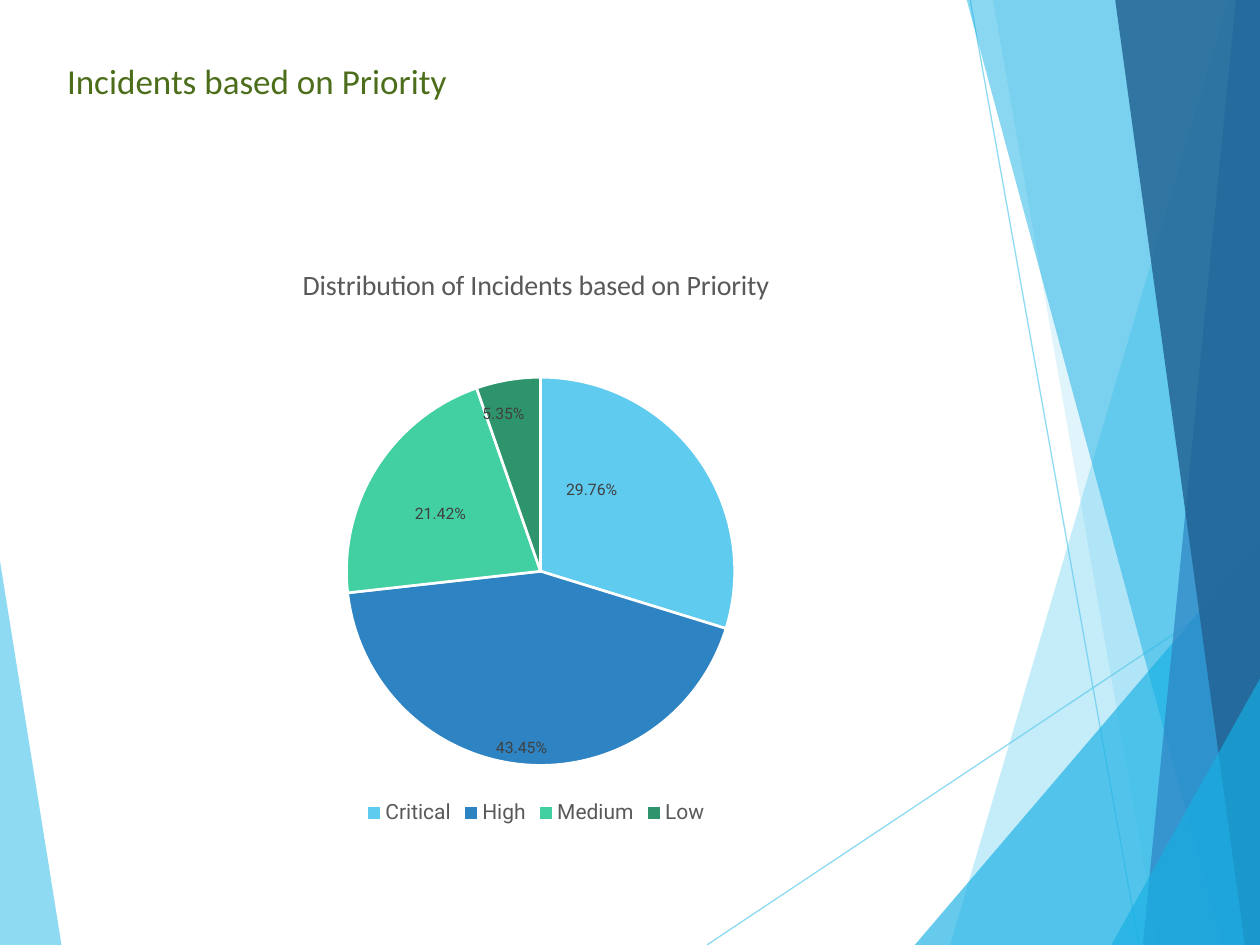
from lxml import etree
from pptx import Presentation
from pptx.chart.data import CategoryChartData
from pptx.dml.color import RGBColor
from pptx.enum import chart as c, text
from pptx.oxml.ns import qn
from pptx.util import Inches, Pt

SKY, CYAN, BLUE, NAVY = "5FCBEF", "17B0E4", "2E83C3", "226292"
GREY, CHARCOAL = "595959", "404040"
LEFT_FACET = (SKY, 70, [(-0.01, 4.39), (0.49, 7.51), (-0.01, 7.5)])
RIGHT_FACETS = [
    (SKY, 36, [(9.75, 0), (7.54, 7.5), (10.02, 7.51), (10.01, 0)]),
    (SKY, 20, [(7.88, -0.01), (9.19, 7.5), (10.01, 7.5), (10.01, -0.01)]),
    (CYAN, 66, [(7.26, 7.5), (10, 4.29), (10.01, 7.5)]),
    (CYAN, 50, [(7.67, -0.01), (9.7, 7.5), (10.01, 7.5), (10.01, -0.01)]),
    (BLUE, 70, [(9.81, -0.01), (9.07, 7.5), (10.01, 7.5), (10, -0.01)]),
    (NAVY, 82, [(8.85, -0.01), (9.88, 7.5), (10.02, 7.5), (10, -0.01)]),
    (CYAN, 66, [(8.82, 7.5), (10.02, 5.35), (10.02, 7.5)]),
]
RAYS = [((5.61, 7.5), (10.01, 4.57)), ((7.7, 0), (9.04, 7.5))]
CENTER, EDGE = c.XL_LABEL_POSITION.CENTER, c.XL_LABEL_POSITION.INSIDE_END
PRIORITIES = [
    ("Critical", 29.76, SKY, CENTER, {"x": -0.03, "y": -0.04}),
    ("High", 43.45, BLUE, EDGE, {"x": -0.03, "y": 0}),
    ("Medium", 21.42, "42D0A2", CENTER, {"x": -0.02, "y": -0.01}),
    ("Low", 5.35, "2E946B", EDGE, {"x": -0.03, "y": 0.03}),
]
PLOT_LAYOUT = {"layoutTarget": "inner", "xMode": "edge", "yMode": "edge",
               "x": 0.29, "y": 0.23, "w": 0.43, "h": 0.66}


def color(hex_value):
    return RGBColor.from_string(hex_value)


def set_values(target, values):
    for name, value in values.items():
        setattr(target, name, value)


def set_font(font, name, size, hex_value):
    set_values(font, {"name": name, "size": Pt(size), "bold": False})
    font.color.rgb = color(hex_value)


def set_alpha(element, percent):
    fill_color = next(element.iter(qn("a:srgbClr")))
    etree.SubElement(fill_color, qn("a:alpha"), val=str(percent * 1000))


def add_facet(slide, fill, alpha, points):
    corners = [(Inches(x), Inches(y)) for x, y in points]
    builder = slide.shapes.build_freeform(*corners[0])
    builder.add_line_segments(corners[1:], close=True)
    shape = builder.convert_to_shape()
    shape.shadow.inherit = False
    shape.fill.solid()
    shape.fill.fore_color.rgb = color(fill)
    shape.line.fill.background()
    set_alpha(shape.element.spPr, alpha)


def add_ray(slide, start, end):
    ray = slide.shapes.add_connector(1, *map(Inches, start + end))
    ray.line.color.rgb = color(SKY)
    ray.line.width = Pt(0.75)
    properties = ray.element.spPr
    set_alpha(properties, 70)
    etree.SubElement(properties, qn("a:effectLst"))


def add_heading(slide, wording):
    box = slide.shapes.add_textbox(*map(Inches, (0.42, 0.42, 3.24, 0.44)))
    frame = box.text_frame
    set_values(frame, {"word_wrap": False,
                       "auto_size": text.MSO_AUTO_SIZE.SHAPE_TO_FIT_TEXT})
    paragraph = frame.paragraphs[0]
    paragraph.alignment = text.PP_ALIGN.CENTER
    run = paragraph.add_run()
    run.text = wording
    set_font(run.font, "Calibri", 20, "4C6E1B")


def set_layout(parent, index, values):
    for old_layout in parent.findall(qn("c:layout")):
        parent.remove(old_layout)
    layout = etree.Element(qn("c:layout"))
    parent.insert(index, layout)
    manual = etree.SubElement(layout, qn("c:manualLayout"))
    for name, value in values.items():
        etree.SubElement(manual, qn(f"c:{name}"), val=str(value))


def style_slice(point, value, fill, position):
    point.format.fill.solid()
    point.format.fill.fore_color.rgb = color(fill)
    point.format.line.color.rgb = color("FFFFFF")
    point.format.line.width = Pt(1.5)
    label = point.data_label
    run = label.text_frame.paragraphs[0].add_run()
    run.text = f"{value}%"
    set_font(run.font, "Roboto", 9, CHARCOAL)
    label.position = position


def style_series(series):
    labels = series.data_labels
    set_values(labels, {"show_value": True, "show_percentage": False,
                        "position": c.XL_LABEL_POSITION.BEST_FIT})
    set_font(labels.font, "Roboto", 12, CHARCOAL)
    for index, (_, value, fill, position, _) in enumerate(PRIORITIES):
        style_slice(series.points[index], value, fill, position)


def add_priority_chart(slide):
    data = CategoryChartData(number_format="0.00")
    data.categories = [name for name, *_ in PRIORITIES]
    data.add_series("Series 1", [value for _, value, *_ in PRIORITIES])
    chart = slide.shapes.add_chart(
        c.XL_CHART_TYPE.PIE, *map(Inches, (0.67, 1.92, 7.17, 4.67)), data).chart
    set_font(chart.font, "Roboto", 10, "000000")
    set_values(chart, {"has_title": True, "has_legend": True})
    run = chart.chart_title.text_frame.paragraphs[0].add_run()
    run.text = "Distribution of Incidents based on Priority"
    set_font(run.font, "Calibri", 16, GREY)
    set_values(chart.legend, {"position": c.XL_LEGEND_POSITION.BOTTOM,
                              "include_in_layout": False})
    set_font(chart.legend.font, "Roboto", 12, GREY)
    chart.plots[0].vary_by_categories = True
    style_series(chart.plots[0].series[0])
    set_layout(chart.element.chart.plotArea, 0, PLOT_LAYOUT)
    slice_labels = list(chart.element.iter(qn("c:dLbl")))
    for label, (*_, offset) in zip(slice_labels, PRIORITIES):
        set_layout(label, 1, offset)


def main():
    presentation = Presentation()
    set_values(presentation, {"slide_width": Inches(10), "slide_height": Inches(7.5)})
    slide = presentation.slides.add_slide(presentation.slide_layouts[6])
    add_facet(slide, *LEFT_FACET)
    for start, end in RAYS:
        add_ray(slide, start, end)
    for facet in RIGHT_FACETS:
        add_facet(slide, *facet)
    add_heading(slide, "Incidents based on Priority")
    add_priority_chart(slide)
    presentation.save("out.pptx")


if __name__ == "__main__":
    main()
